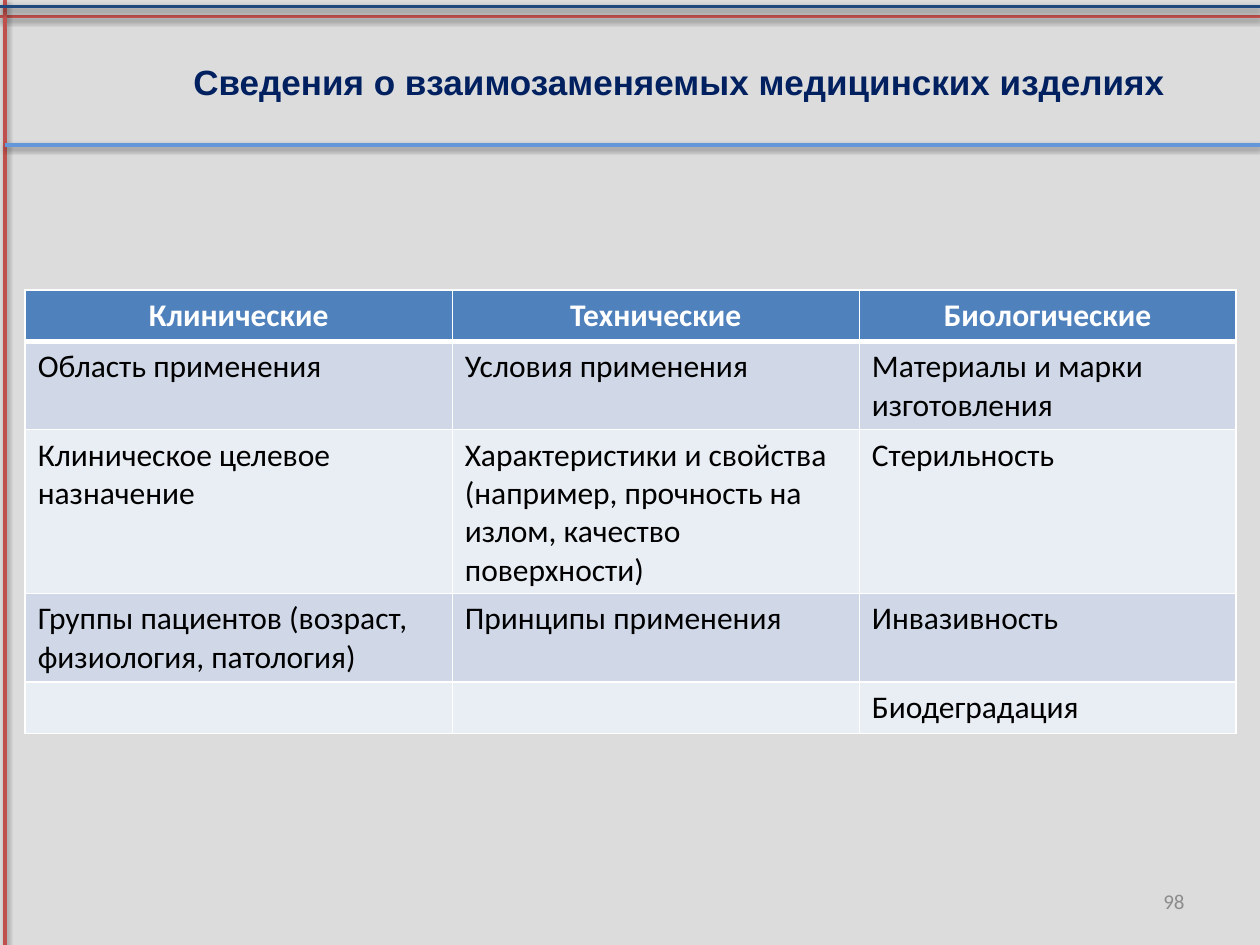
from lxml.etree import SubElement
from pptx import Presentation
from pptx.dml.color import RGBColor
from pptx.enum.shapes import MSO_CONNECTOR
from pptx.enum.text import MSO_ANCHOR, PP_ALIGN
from pptx.oxml import parse_xml
from pptx.oxml.ns import nsdecls, qn
from pptx.util import Inches, Pt

WIDTH, HEIGHT = 10, 7.5
BACKGROUND = RGBColor(0xDC, 0xDC, 0xDC)
RED = RGBColor(0xC0, 0x50, 0x4D)
DARK_BLUE = RGBColor(0x1F, 0x49, 0x7D)
LIGHT_BLUE = RGBColor(0x64, 0x97, 0xDA)
NAVY = RGBColor(0x00, 0x20, 0x60)
GREY = RGBColor(0x8C, 0x8C, 0x8C)
WHITE = RGBColor(0xFF, 0xFF, 0xFF)
BLACK = RGBColor(0, 0, 0)
HEADER_FILL = RGBColor(0x4F, 0x81, 0xBD)
BAND_FILLS = [RGBColor(0xE9, 0xED, 0xF4), RGBColor(0xD0, 0xD8, 0xE8)]

TITLE = "Сведения о взаимозаменяемых медицинских изделиях"
PAGE_NUMBER = "98"
ROWS = [
    ("Клинические", "Технические", "Биологические"),
    ("Область применения", "Условия применения", "Материалы и марки изготовления"),
    ("Клиническое целевое назначение",
     "Характеристики и свойства (например, прочность на излом, качество поверхности)",
     "Стерильность"),
    ("Группы пациентов (возраст, физиология, патология)", "Принципы применения", "Инвазивность"),
    ("", "", "Биодеградация"),
]
COLUMN_WIDTHS = [3.39, 3.23, 2.99]
ROW_HEIGHT = 0.41  # minimum; rows grow with their text

# Frame lines: start x, start y, end x, end y, colour
FRAME_LINES = [
    (WIDTH, 0.13, 0, 0.13, RED),
    (0.04, 0, 0.04, HEIGHT, RED),
    (0, 0.05, WIDTH, 0.05, DARK_BLUE),
    (0.04, 1.15, WIDTH, 1.15, LIGHT_BLUE),
]
SHADOW = (
    f'<a:effectLst {nsdecls("a")}>'
    f'<a:outerShdw blurRad="{Pt(3.1)}" dist="{Pt(1.6)}" dir="5400000" rotWithShape="0">'
    '<a:srgbClr val="000000"><a:alpha val="38000"/></a:srgbClr>'
    '</a:outerShdw></a:effectLst>'
)


def format_text(paragraph, size, color, font="Calibri", bold=False, align=PP_ALIGN.LEFT):
    paragraph.alignment = align
    paragraph.font.size = Pt(size)
    for run in paragraph.runs:
        run.font.name, run.font.size, run.font.bold = font, Pt(size), bold
        run.font.color.rgb = color


def add_text(slide, box, text, **style):
    shape = slide.shapes.add_textbox(*map(Inches, box))
    frame = shape.text_frame
    frame.word_wrap = True
    frame.vertical_anchor = MSO_ANCHOR.MIDDLE
    frame.text = text
    format_text(frame.paragraphs[0], **style)


def add_borders(cell, widths):
    properties = cell._tc.get_or_add_tcPr()
    for side, width in widths.items():
        border = SubElement(properties, qn(f"a:ln{side}"), w=str(Pt(width)))
        fill = SubElement(border, qn("a:solidFill"))
        SubElement(fill, qn("a:srgbClr"), val=str(WHITE))


presentation = Presentation()
presentation.slide_width, presentation.slide_height = Inches(WIDTH), Inches(HEIGHT)
slide = presentation.slides.add_slide(presentation.slide_layouts[6])
slide.background.fill.solid()
slide.background.fill.fore_color.rgb = BACKGROUND

# Frame lines
for *ends, color in FRAME_LINES:
    connector = slide.shapes.add_connector(MSO_CONNECTOR.STRAIGHT, *map(Inches, ends))
    connector.line.color.rgb = color
    connector.line.width = Pt(2)
    connector._element.spPr.append(parse_xml(SHADOW))

# Page number and title
add_text(slide, (7.17, 6.95, 2.33, 0.4), PAGE_NUMBER, size=12, color=GREY, align=PP_ALIGN.RIGHT)
add_text(slide, (0.78, 0.13, 9.22, 1.04), TITLE, size=20, color=NAVY, font="Arial",
         bold=True, align=PP_ALIGN.CENTER)

# Table
table = slide.shapes.add_table(
    len(ROWS), len(COLUMN_WIDTHS), Inches(0.2), Inches(2.3),
    Inches(sum(COLUMN_WIDTHS)), Inches(ROW_HEIGHT * len(ROWS))).table
for column, width in zip(table.columns, COLUMN_WIDTHS):
    column.width = Inches(width)
for row_index, texts in enumerate(ROWS):
    header = row_index == 0
    for column_index, text in enumerate(texts):
        cell = table.cell(row_index, column_index)
        cell.text = text
        format_text(cell.text_frame.paragraphs[0], 18, WHITE if header else BLACK, bold=header,
                    align=PP_ALIGN.CENTER if header else PP_ALIGN.LEFT)
        add_borders(cell, {"L": 1, "R": 1, "T": 3 if row_index == 1 else 1, "B": 3 if header else 1})
        cell.fill.solid()
        cell.fill.fore_color.rgb = HEADER_FILL if header else BAND_FILLS[row_index % 2]

presentation.save("out.pptx")
